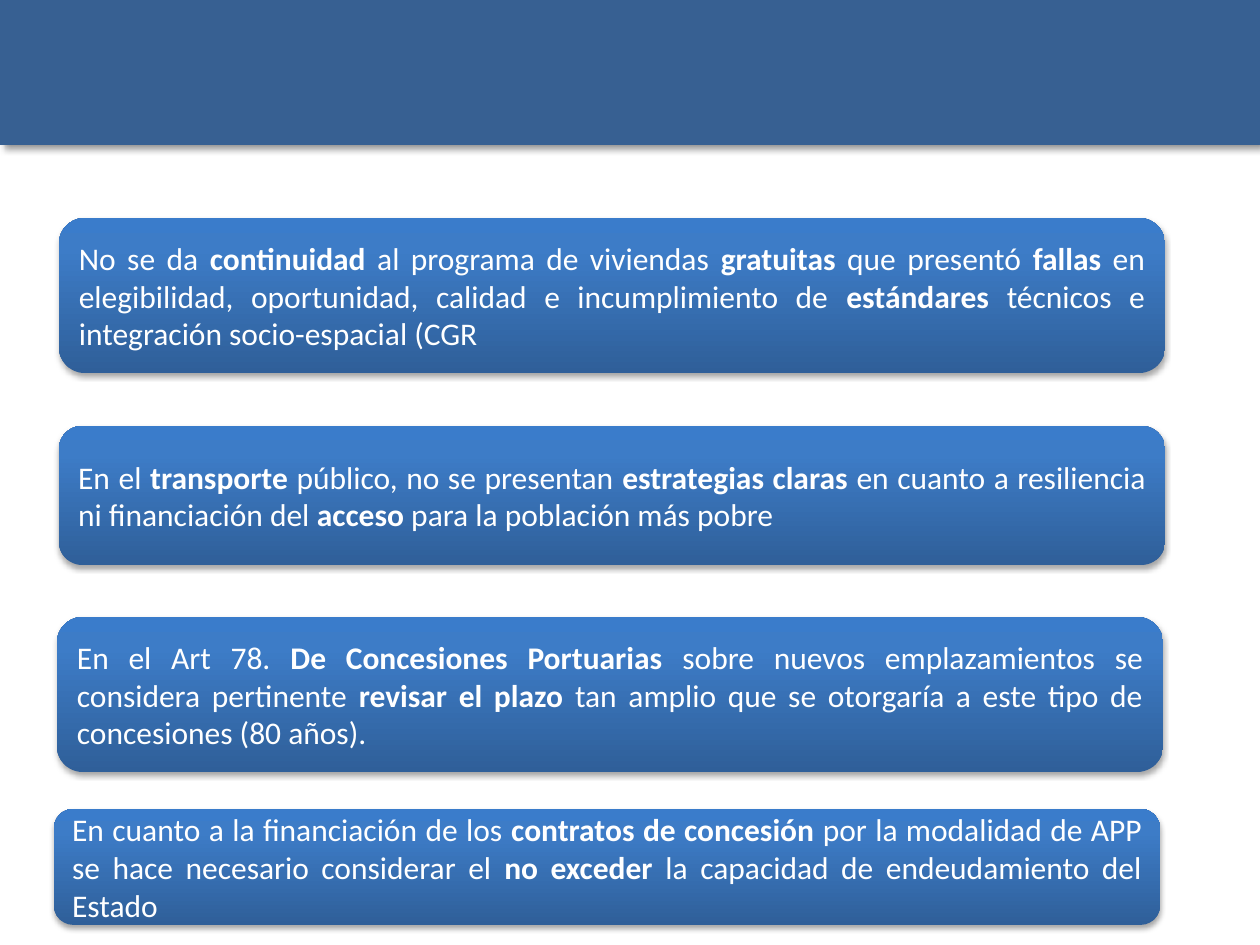
from lxml import etree
from pptx import Presentation
from pptx.dml.color import RGBColor
from pptx.enum.shapes import MSO_SHAPE
from pptx.enum.text import MSO_ANCHOR, PP_ALIGN
from pptx.oxml.ns import qn
from pptx.util import Emu, Pt

RECTANGLE = MSO_SHAPE.RECTANGLE
ROUNDED = MSO_SHAPE.ROUNDED_RECTANGLE
MIDDLE = MSO_ANCHOR.MIDDLE
JUSTIFY = PP_ALIGN.JUSTIFY

HEADER_BLUE = RGBColor(0x37, 0x60, 0x92)
WHITE = RGBColor(0xFF, 0xFF, 0xFF)
BLACK = RGBColor(0x00, 0x00, 0x00)
CARD_STOPS = (
    (0, RGBColor(0x2F, 0x5F, 0x99)),
    (80, RGBColor(0x3D, 0x7C, 0xC7)),
    (100, RGBColor(0x3A, 0x7C, 0xCB)),
)

PX_PER_INCH = 126
SLIDE_WIDTH, SLIDE_HEIGHT = 1260, 945
HEADER_HEIGHT = 145
CARD_WIDTH = 1106

CARDS = (
    (59, 218, 155,
     "No se da **continuidad** al programa de viviendas **gratuitas** que "
     "presentó **fallas** en elegibilidad, oportunidad, calidad e "
     "incumplimiento de **estándares** técnicos e integración "
     "socio-espacial (CGR"),
    (59, 426, 139,
     "En el **transporte** público, no se presentan **estrategias claras **"
     "en cuanto a resiliencia ni financiación del **acceso** para la "
     "población más pobre"),
    (57, 617, 155,
     "En el Art 78. **De Concesiones Portuarias **sobre nuevos "
     "emplazamientos se considera pertinente **revisar el plazo **tan "
     "amplio que se otorgaría a este tipo de concesiones (80 años)."),
    (54, 809, 116,
     "En cuanto a la financiación de los **contratos de concesión **por la "
     "modalidad de APP se hace necesario considerar el **no exceder **la "
     "capacidad de endeudamiento del Estado"),
)


def px(length):
    return Emu(round(length * 914400 / PX_PER_INCH))


def add_color(parent, color, opacity=100):
    element = etree.SubElement(parent, qn("a:srgbClr"), val=str(color))
    if opacity < 100:
        etree.SubElement(element, qn("a:alpha"), val=str(opacity * 1000))


def add_shadow(shape, opacity, blur, distance, angle):
    shape.shadow.inherit = False
    effects = shape._element.spPr.find(qn("a:effectLst"))
    shadow = etree.SubElement(
        effects, qn("a:outerShdw"), blurRad=str(Pt(blur)),
        dist=str(Pt(distance)), dir=str(angle * 60000),
        algn="ctr", rotWithShape="0")
    add_color(shadow, BLACK, opacity)


def fill_gradient(shape, stops):
    shape.fill.gradient()
    shape.fill.gradient_angle = 90
    stop_list = shape._element.spPr.find(qn("a:gradFill")).find(qn("a:gsLst"))
    for stop in list(stop_list):
        stop_list.remove(stop)
    for position, color in stops:
        stop = etree.SubElement(
            stop_list, qn("a:gs"), pos=str(position * 1000))
        add_color(stop, color)


def write_text(shape, text, size=18, font="Calibri", color=WHITE,
               alignment=JUSTIFY, anchor=MIDDLE):
    frame = shape.text_frame
    frame.word_wrap = True
    frame.vertical_anchor = anchor
    paragraph = frame.paragraphs[0]
    paragraph.alignment = alignment
    for index, part in enumerate(text.split("**")):
        run = paragraph.add_run()
        run.text = part
        run.font.name = font
        run.font.size = Pt(size)
        run.font.bold = index % 2 == 1
        run.font.color.rgb = color


def add_box(slide, kind, left, top, width, height):
    shape = slide.shapes.add_shape(
        kind, px(left), px(top), px(width), px(height))
    shape.line.fill.background()
    return shape


def add_header(slide, left, top, width, height):
    band = add_box(slide, RECTANGLE, left, top, width, height)
    band.fill.solid()
    band.fill.fore_color.rgb = HEADER_BLUE
    add_shadow(band, opacity=40, blur=4, distance=3, angle=45)


def add_card(slide, left, top, width, height, text):
    card = add_box(slide, ROUNDED, left, top, width, height)
    fill_gradient(card, CARD_STOPS)
    add_shadow(card, opacity=35, blur=3.1, distance=1.8, angle=90)
    write_text(card, text)


def main():
    presentation = Presentation()
    presentation.slide_width = px(SLIDE_WIDTH)
    presentation.slide_height = px(SLIDE_HEIGHT)
    slide = presentation.slides.add_slide(presentation.slide_layouts[6])
    add_header(slide, 0, 0, SLIDE_WIDTH, HEADER_HEIGHT)
    for left, top, height, text in CARDS:
        add_card(slide, left, top, CARD_WIDTH, height, text)
    presentation.save("out.pptx")


if __name__ == "__main__":
    main()
